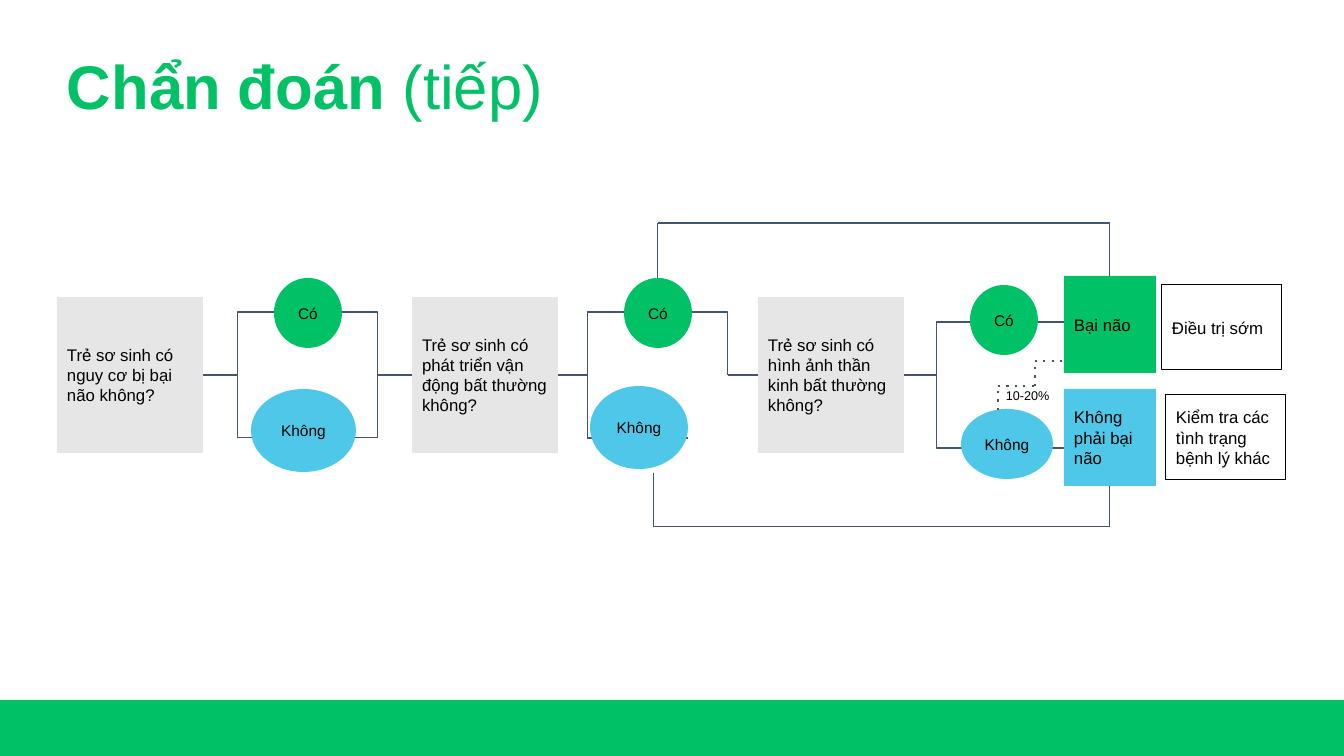
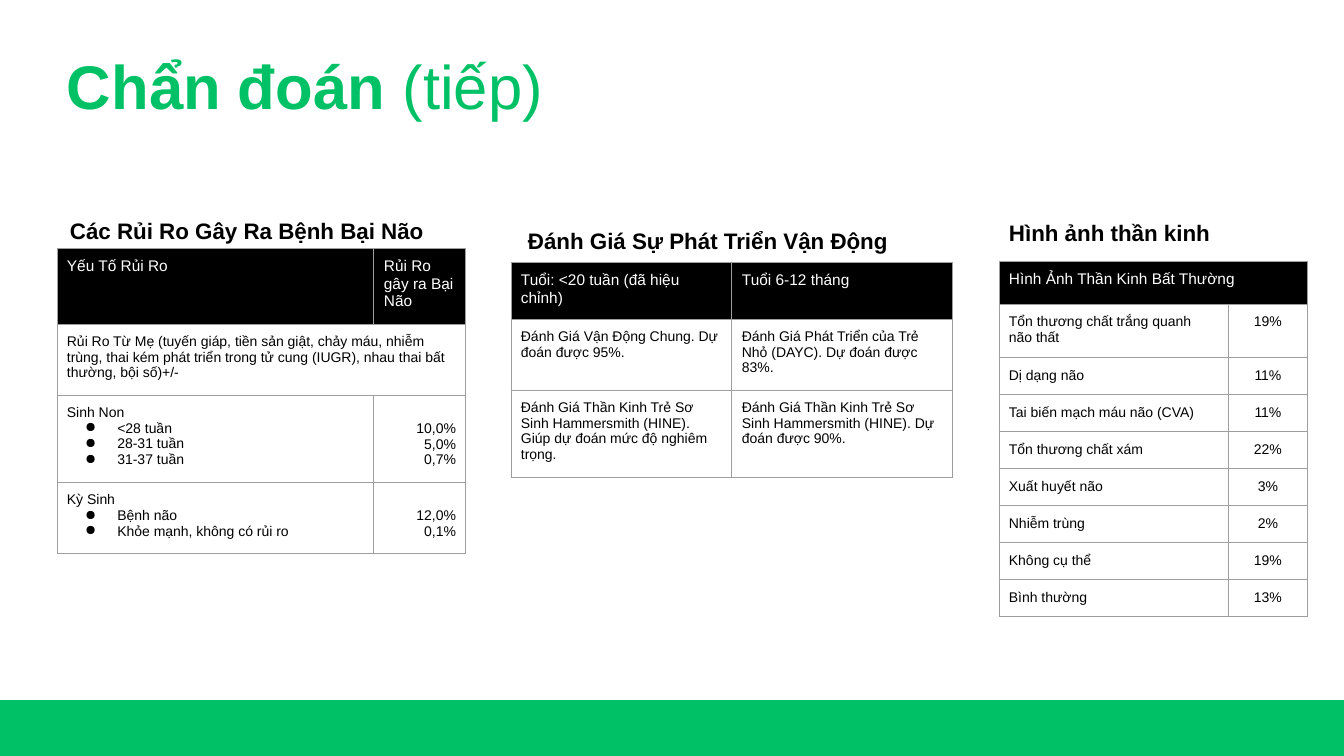
from lxml.etree import SubElement
from pptx import Presentation
from pptx.dml.color import RGBColor
from pptx.enum.shapes import MSO_CONNECTOR, MSO_SHAPE
from pptx.enum.text import MSO_ANCHOR as ANCHOR, PP_ALIGN as ALIGN
from pptx.oxml.ns import qn
from pptx.util import Pt

PX = 914400 / 100.8
FONT = "Arial"
COLORS = {
    "green": "00C165", "blue": "4FC7E8", "gray": "E7E6E6", "wire": "44546A",
    "black": "000000", "white": "FFFFFF", "border": "9E9E9E",
}
TITLE = ("Chẩn đoán ", "(tiếp)")

QUESTION = {"size": (146, 156), "fill": "gray"}
YES = {"size": (68, 70), "fill": "green", "shape": MSO_SHAPE.OVAL,
       "font_size": 11, "align": ALIGN.CENTER}
NO = {**YES, "size": (98, 83), "fill": "blue"}
RESULT = {"size": (92, 97)}
ACTION = {"size": (120, 85), "fill": "white", "line": "black"}

NODES = [
    ("risk", "Trẻ sơ sinh có nguy cơ bị bại não không?", (57, 297), QUESTION),
    ("risk no", "Không", (251, 389), {**NO, "size": (105, 83)}),
    ("risk yes", "Có", (274, 278), YES),
    ("motor", "Trẻ sơ sinh có phát triển vận động bất thường không?", (412, 297), QUESTION),
    ("motor no", "Không", (590, 386), NO),
    ("motor yes", "Có", (624, 278), YES),
    ("imaging", "Trẻ sơ sinh có hình ảnh thần kinh bất thường không?", (758, 297), QUESTION),
    ("imaging no", "Không", (961, 409), {**NO, "size": (92, 70)}),
    ("imaging yes", "Có", (970, 285), YES),
    ("not palsy", "Không phải bại não", (1064, 389), {**RESULT, "fill": "blue"}),
    ("palsy", "Bại não", (1064, 276), {**RESULT, "fill": "green"}),
    ("check", "Kiểm tra các tình trạng bệnh lý khác", (1166, 395), ACTION),
    ("treat", "Điều trị sớm", (1162, 285), ACTION),
]
RISK_LOOP = (238, 312, 140, 126)
BRACKETS = [
    [(728, 375), (728, 312), (588, 312), (588, 438), (688, 438)],
    [(1064, 322), (937, 322), (937, 448), (1064, 448)],
]
LINKS = [
    [("risk", 3), ("risk loop", 1)],
    [("risk loop", 3), ("motor", 1)],
    [("motor", 3), (588, 375)],
    [(728, 375), ("imaging", 1)],
    [("imaging", 3), (937, 375)],
    [("motor yes", 0), (658, 223), (1110, 223), ("palsy", 0)],
    [(654, 473), (654, 527), (1110, 527), ("not palsy", 2)],
]
DOTTED_LINK = [(998, 410), (998, 386), (1035, 386), (1035, 361), (1064, 361)]

TABLES = [
    {
        "title": "Các Rủi Ro Gây Ra Bệnh Bại Não", "title_at": (60, 212, 402, 37),
        "at": (57, 248), "columns": (317, 92), "heights": (76, 71, 87, 71),
        "align": ALIGN.RIGHT, "value_top": 26,
        "rows": [
            ("Yếu Tố Rủi Ro", "Rủi Ro gây ra Bại Não"),
            ("Rủi Ro Từ Mẹ (tuyến giáp, tiền sản giật, chảy máu, nhiễm trùng, thai kém phát triển "
             "trong tử cung (IUGR), nhau thai bất thường, bội số)+/-",),
            (["Sinh Non", "<28 tuần", "28-31 tuần", "31-37 tuần"], ["10,0%", "5,0%", "0,7%"]),
            (["Kỳ Sinh", "Bệnh não", "Khỏe mạnh, không có rủi ro"], ["12,0%", "0,1%"]),
        ],
    },
    {
        "title": "Đánh Giá Sự Phát Triển Vận Động", "title_at": (518, 222, 409, 37),
        "at": (511, 262), "columns": (221, 221), "heights": (57, 71, 87),
        "align": ALIGN.LEFT, "value_top": 10,
        "rows": [
            ("Tuổi: <20 tuần (đã hiệu chỉnh)", "Tuổi 6-12 tháng"),
            ("Đánh Giá Vận Động Chung. Dự đoán được 95%.",
             "Đánh Giá Phát Triển của Trẻ Nhỏ (DAYC). Dự đoán được 83%."),
            ("Đánh Giá Thần Kinh Trẻ Sơ Sinh Hammersmith (HINE). Giúp dự đoán mức độ nghiêm trọng.",
             "Đánh Giá Thần Kinh Trẻ Sơ Sinh Hammersmith (HINE). Dự đoán được 90%."),
        ],
    },
    {
        "title": "Hình ảnh thần kinh", "title_at": (999, 214, 268, 37),
        "at": (999, 261), "columns": (229, 80), "heights": (43, 53) + (37,) * 7,
        "align": ALIGN.CENTER, "value_top": 10,
        "rows": [
            ("Hình Ảnh Thần Kinh Bất Thường",),
            ("Tổn thương chất trắng quanh não thất", "19%"),
            ("Dị dạng não", "11%"),
            ("Tai biến mạch máu não (CVA)", "11%"),
            ("Tổn thương chất xám", "22%"),
            ("Xuất huyết não", "3%"),
            ("Nhiễm trùng", "2%"),
            ("Không cụ thể", "19%"),
            ("Bình thường", "13%"),
        ],
    },
]


def emu(*lengths):
    return [round(length * PX) for length in lengths]


def rgb(name):
    return RGBColor.from_string(COLORS[name])


def add_bullet(para):
    props = para._p.get_or_add_pPr()
    props.set("marL", "457200")
    props.set("indent", "-292608")
    SubElement(SubElement(props, qn("a:buClr")), qn("a:srgbClr"), val=COLORS["black"])
    SubElement(props, qn("a:buChar"), char="●")


def write(frame, text, size=12, color="black", bold=False, align=ALIGN.LEFT,
          spacing=None, bullets=False, light=""):
    lines = [text] if isinstance(text, str) else text
    for index, line in enumerate(lines):
        para = frame.paragraphs[0] if index == 0 else frame.add_paragraph()
        if bullets and index:
            add_bullet(para)
        para.alignment = align
        if spacing:
            para.line_spacing = spacing
        for words, weight in ((line, bold), (light, False)):
            if words:
                span = para.add_run()
                span.text = words
                span.font.name = FONT
                span.font.size = Pt(size)
                span.font.bold = weight
                span.font.color.rgb = rgb(color)


def set_frame(frame, vertical_inset, anchor):
    frame.word_wrap = True
    frame.margin_left, frame.margin_right = emu(10, 10)
    frame.margin_top, frame.margin_bottom = emu(vertical_inset, vertical_inset)
    frame.vertical_anchor = anchor


def add_text(page, text, at, inset=5, anchor=ANCHOR.TOP, **style):
    box = page.shapes.add_textbox(*emu(*at))
    set_frame(box.text_frame, inset, anchor)
    write(box.text_frame, text, **style)


def paint(shape, fill=None, line=None):
    shape.shadow.inherit = False
    if fill:
        shape.fill.solid()
        shape.fill.fore_color.rgb = rgb(fill)
    else:
        shape.fill.background()
    if line:
        shape.line.color.rgb = rgb(line)
        shape.line.width = Pt(0.75)
    else:
        shape.line.fill.background()


def add_node(page, text, at, size, fill, shape=MSO_SHAPE.RECTANGLE, line=None,
             font_size=12, align=ALIGN.LEFT):
    node = page.shapes.add_shape(shape, *emu(*at, *size))
    paint(node, fill, line)
    set_frame(node.text_frame, 10, ANCHOR.MIDDLE)
    write(node.text_frame, text, size=font_size, align=align)
    return node


def add_link(page, stops, nodes, dotted=False):
    for start, end in zip(stops, stops[1:]):
        points = [(0, 0) if isinstance(stop[0], str) else stop for stop in (start, end)]
        link = page.shapes.add_connector(MSO_CONNECTOR.STRAIGHT, *emu(*points[0], *points[1]))
        for stop, connect in ((start, link.begin_connect), (end, link.end_connect)):
            if isinstance(stop[0], str):
                connect(nodes[stop[0]], stop[1])
        link.line.color.rgb = rgb("wire")
        link.line.width = Pt(1.5 if dotted else 0.75)
        props = link._element.spPr
        if dotted:
            SubElement(props.find(qn("a:ln")), qn("a:prstDash"), val="dot")
        SubElement(props, qn("a:effectLst"))


def add_page(deck):
    page = deck.slides.add_slide(deck.slide_layouts[6])
    band = page.shapes.add_shape(MSO_SHAPE.RECTANGLE, *emu(0, 700, 1344, 56))
    paint(band, "green")
    add_text(page, TITLE[0], (57, 50, 551, 79), anchor=ANCHOR.MIDDLE, size=44,
             color="green", bold=True, light=TITLE[1], spacing=0.9)
    return page


def add_flow(page):
    loop = page.shapes.add_shape(MSO_SHAPE.RECTANGLE, *emu(*RISK_LOOP))
    paint(loop, line="wire")
    for points in BRACKETS:
        builder = page.shapes.build_freeform(*points[0], scale=PX)
        builder.add_line_segments(points[1:], close=False)
        paint(builder.convert_to_shape(), line="wire")
    nodes = {"risk loop": loop}
    for name, text, at, style in NODES:
        nodes[name] = add_node(page, text, at, **style)
    for stops in LINKS:
        add_link(page, stops, nodes)
    add_link(page, DOTTED_LINK, nodes, dotted=True)
    add_text(page, "10-20%", (996, 384, 92, 23), inset=10, anchor=ANCHOR.MIDDLE, size=9)


def format_cell(cell, fill=None, top=10):
    cell.margin_left, cell.margin_right, cell.margin_bottom = emu(10, 10, 10)
    cell.margin_top = emu(top)[0]
    props = cell._tc.get_or_add_tcPr()
    for side in ("a:lnL", "a:lnR", "a:lnT", "a:lnB"):
        border = SubElement(props, qn(side), w=str(Pt(0.75)))
        SubElement(SubElement(border, qn("a:solidFill")), qn("a:srgbClr"), val=COLORS["border"])
    if fill:
        cell.fill.solid()
        cell.fill.fore_color.rgb = rgb(fill)
    else:
        cell.fill.background()


def add_data_table(page, data):
    add_text(page, data["title"], data["title_at"], size=16, bold=True)
    rows, columns, heights = data["rows"], data["columns"], data["heights"]
    area = emu(*data["at"], sum(columns), sum(heights))
    table = page.shapes.add_table(len(rows), len(columns), *area).table
    table.first_row = table.horz_banding = False
    for column, width in zip(table.columns, emu(*columns)):
        column.width = width
    for row, height in zip(table.rows, emu(*heights)):
        row.height = height
    for r, texts in enumerate(rows):
        header = r == 0
        for c in range(len(columns)):
            value = c == 1 and not header
            format_cell(table.cell(r, c), "black" if header else None,
                        data["value_top"] if value else 10)
            if c < len(texts):
                write(table.cell(r, c).text_frame, texts[c], size=11 if header else 10,
                      color="white" if header else "black",
                      align=data["align"] if value else ALIGN.LEFT, bullets=c == 0)
        if len(texts) == 1:
            table.cell(r, 0).merge(table.cell(r, 1))


def main():
    deck = Presentation()
    deck.slide_width, deck.slide_height = emu(1344, 756)
    add_flow(add_page(deck))
    tables_page = add_page(deck)
    for data in TABLES:
        add_data_table(tables_page, data)
    deck.save("out.pptx")


if __name__ == "__main__":
    main()
